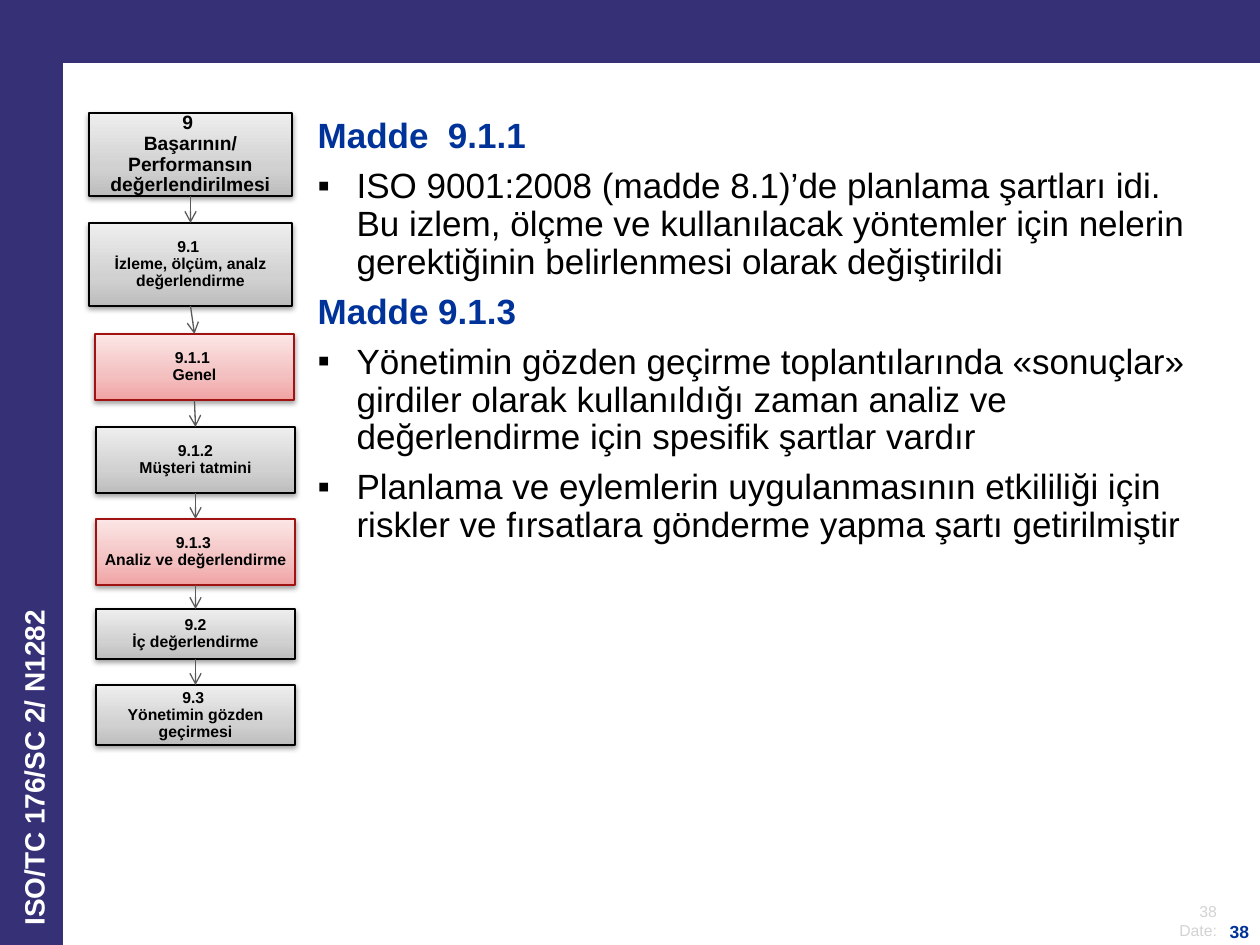
import copy
import itertools
from dataclasses import dataclass

import lxml.etree
import pptx
import pptx.dml.color
import pptx.enum.shapes
import pptx.enum.text
import pptx.oxml.ns
import pptx.util

RGBColor = pptx.dml.color.RGBColor
Pt = pptx.util.Pt
Align = pptx.enum.text.PP_ALIGN
Anchor = pptx.enum.text.MSO_ANCHOR
qn = pptx.oxml.ns.qn

EMU_PER_PX = 914400 / 126
FONT = "Arial"
WHITE = RGBColor(0xFF, 0xFF, 0xFF)
BLACK = RGBColor(0, 0, 0)
INDIGO = RGBColor(0x36, 0x31, 0x77)
BLUE = RGBColor(0x00, 0x33, 0x99)
PALE_GRAY = RGBColor(0xD3, 0xD3, 0xD3)
ARROW_GRAY = RGBColor(0x59, 0x59, 0x59)
DARK_RED = RGBColor(0xA1, 0x12, 0x12)
GRAY_STOPS = (RGBColor(0xBD, 0xBD, 0xBD), RGBColor(0xD1, 0xD1, 0xD1), RGBColor(0xEE, 0xEE, 0xEE))
RED_STOPS = (RGBColor(0xF1, 0xA3, 0xA3), RGBColor(0xF3, 0xBF, 0xBF), RGBColor(0xFC, 0xE6, 0xE6))
STOP_POSITIONS = (0, 0.35, 1)


@dataclass(frozen=True)
class Area:
    left: int
    top: int
    width: int
    height: int

    def emu(self) -> tuple[int, ...]:
        return tuple(px(n) for n in (self.left, self.top, self.width, self.height))


@dataclass(frozen=True)
class Clause:
    area: Area
    lines: tuple[str, ...]
    size: int = 9
    highlighted: bool = False


@dataclass(frozen=True)
class Label:
    area: Area
    lines: tuple[str, ...]
    size: int
    color: RGBColor
    bold: bool
    frame: dict
    paragraph: dict
    rotation: int = 0


@dataclass(frozen=True)
class Point:
    text: str
    heading: bool = False


CLAUSES = (
    Clause(Area(89, 113, 203, 83), ("9 ", "Başarının/", "Performansın değerlendirilmesi"), size=11),
    Clause(Area(89, 223, 203, 83), ("9.1 ", "İzleme, ölçüm, analz değerlendirme")),
    Clause(Area(95, 334, 199, 66), ("9.1.1 ", "Genel"), highlighted=True),
    Clause(Area(96, 427, 199, 66), ("9.1.2", "Müşteri tatmini")),
    Clause(Area(96, 519, 199, 66), ("9.1.3 ", "Analiz ve değerlendirme"), highlighted=True),
    Clause(Area(96, 609, 199, 50), ("9.2", "İç değerlendirme")),
    Clause(Area(96, 685, 199, 60), ("9.3 ", "Yönetimin gözden geçirmesi")),
)

CORNER_FRAME = {"word_wrap": False, "vertical_anchor": Anchor.BOTTOM}
CORNER_PARAGRAPH = {"alignment": Align.RIGHT}
LABELS = (
    Label(Area(1164, 896, 64, 49), ("38", "Date: "), 9, PALE_GRAY, False,
          CORNER_FRAME, CORNER_PARAGRAPH),
    Label(Area(-193, 670, 475, 58), ("ISO/TC 176/SC 2/ N1282",), 16, WHITE, True,
          {"word_wrap": True}, {"line_spacing": 0.9, "space_before": Pt(8)}, 270),
    Label(Area(1216, 914, 44, 33), ("38",), 10, BLUE, True, CORNER_FRAME, CORNER_PARAGRAPH),
)

POINTS = (
    Point("Madde  9.1.1", heading=True),
    Point("ISO 9001:2008 (madde 8.1)’de planlama şartları idi. Bu izlem, ölçme ve "
          "kullanılacak yöntemler için nelerin gerektiğinin belirlenmesi olarak değiştirildi"),
    Point("Madde 9.1.3", heading=True),
    Point("Yönetimin gözden geçirme toplantılarında «sonuçlar» girdiler olarak kullanıldığı "
          "zaman analiz ve değerlendirme için spesifik şartlar vardır"),
    Point("Planlama ve eylemlerin uygulanmasının etkililiği için riskler ve fırsatlara "
          "gönderme yapma şartı getirilmiştir"),
)


def px(length: int) -> int:
    return round(length * EMU_PER_PX)


def apply(target, values: dict) -> None:
    for key, value in values.items():
        setattr(target, key, value)


def set_margins(frame, side: int, end: int) -> None:
    apply(frame, {"margin_left": px(side), "margin_right": px(side),
                  "margin_top": px(end), "margin_bottom": px(end)})


def write(frame, lines: tuple[str, ...], size: int, color: RGBColor, bold: bool,
          paragraph_format: dict) -> None:
    frame.text = "\n".join(lines)
    for paragraph in frame.paragraphs:
        apply(paragraph, paragraph_format)
        for run in paragraph.runs:
            apply(run.font, {"name": FONT, "size": Pt(size), "bold": bold})
            run.font.color.rgb = color


def draw_band(shapes, area: Area) -> None:
    band = shapes.add_shape(pptx.enum.shapes.MSO_SHAPE.RECTANGLE, *area.emu())
    band.shadow.inherit = False
    band.fill.solid()
    band.fill.fore_color.rgb = INDIGO
    band.line.fill.background()


def draw_label(shapes, label: Label) -> None:
    box = shapes.add_textbox(*label.area.emu())
    box.rotation = label.rotation
    apply(box.text_frame, label.frame)
    set_margins(box.text_frame, 11, 5)
    write(box.text_frame, label.lines, label.size, label.color, label.bold, label.paragraph)


def fill_gradient(shape, colors: tuple[RGBColor, ...]) -> None:
    shape.fill.gradient()
    shape.fill.gradient_angle = 90
    stop_list = shape._element.spPr.find(".//" + qn("a:gsLst"))
    stop_list.append(copy.deepcopy(stop_list[-1]))
    for stop, color, position in zip(shape.fill.gradient_stops, colors, STOP_POSITIONS):
        stop.color.rgb = color
        stop.position = position


def cast_shadow(shape) -> None:
    shape.shadow.inherit = False
    effects = shape._element.spPr.find(qn("a:effectLst"))
    shadow = lxml.etree.SubElement(effects, qn("a:outerShdw"), blurRad="40000", dist="20000",
                                   dir="5400000", rotWithShape="0")
    color = lxml.etree.SubElement(shadow, qn("a:srgbClr"), val=str(BLACK))
    lxml.etree.SubElement(color, qn("a:alpha"), val="38000")


def draw_clause(shapes, clause: Clause):
    box = shapes.add_shape(pptx.enum.shapes.MSO_SHAPE.RECTANGLE, *clause.area.emu())
    fill_gradient(box, RED_STOPS if clause.highlighted else GRAY_STOPS)
    box.line.color.rgb = DARK_RED if clause.highlighted else BLACK
    box.line.width = Pt(0.75)
    cast_shadow(box)
    apply(box.text_frame, {"word_wrap": True, "vertical_anchor": Anchor.MIDDLE})
    set_margins(box.text_frame, 6, 6)
    write(box.text_frame, clause.lines, clause.size, BLACK, True,
          {"alignment": Align.CENTER, "line_spacing": 0.9})
    return box


def draw_arrow(shapes, upper, lower) -> None:
    arrow = shapes.add_connector(pptx.enum.shapes.MSO_CONNECTOR.STRAIGHT, 0, 0, 0, 0)
    arrow.begin_connect(upper, 2)
    arrow.end_connect(lower, 0)
    arrow.line.color.rgb = ARROW_GRAY
    arrow.line.width = Pt(0.75)
    lxml.etree.SubElement(arrow.line._get_or_add_ln(), qn("a:tailEnd"), type="arrow")
    lxml.etree.SubElement(arrow._element.spPr, qn("a:effectLst"))


def fill_body(body, area: Area, points: tuple[Point, ...]) -> None:
    apply(body, dict(zip(("left", "top", "width", "height"), area.emu())))
    frame = body.text_frame
    apply(frame, {"word_wrap": True, "auto_size": pptx.enum.text.MSO_AUTO_SIZE.NONE,
                  "vertical_anchor": Anchor.TOP})
    write(frame, tuple(point.text for point in points), 20, BLACK, False,
          {"alignment": Align.LEFT, "line_spacing": 0.9, "space_before": Pt(7)})
    for paragraph, point in zip(frame.paragraphs, points):
        properties = paragraph._p.get_or_add_pPr()
        properties.set("marL", str(px(39)))
        properties.set("indent", str(-px(39)))
        if point.heading:
            lxml.etree.SubElement(properties, qn("a:buNone"))
            paragraph.runs[0].font.bold = True
            paragraph.runs[0].font.color.rgb = BLUE
        else:
            lxml.etree.SubElement(properties, qn("a:buChar"), char="▪")


def main() -> None:
    deck = pptx.Presentation()
    apply(deck, {"slide_width": px(1260), "slide_height": px(945)})
    slide = deck.slides.add_slide(deck.slide_layouts[1])
    shapes = slide.shapes
    title = shapes.title._element
    title.getparent().remove(title)
    for area in (Area(0, 0, 1260, 63), Area(0, 0, 63, 945)):
        draw_band(shapes, area)
    for label in LABELS:
        draw_label(shapes, label)
    fill_body(slide.placeholders[1], Area(305, 112, 914, 494), POINTS)
    boxes = [draw_clause(shapes, clause) for clause in CLAUSES]
    for upper, lower in itertools.pairwise(boxes):
        draw_arrow(shapes, upper, lower)
    deck.save("out.pptx")


if __name__ == "__main__":
    main()
